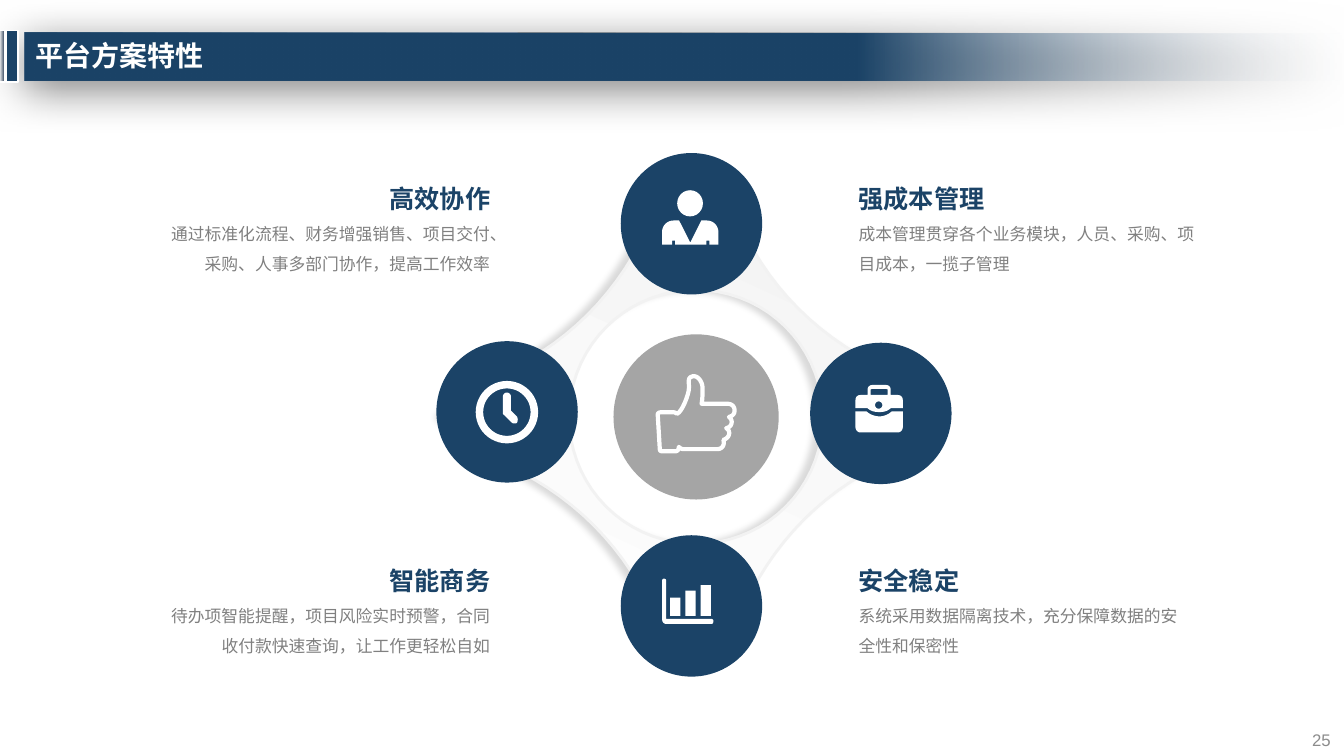
import math
import pptx
import pptx.util
import pptx.dml.color
import pptx.enum.shapes
import pptx.enum.text
import pptx.oxml.ns
from lxml import etree

Pt = pptx.util.Pt
SHAPE = pptx.enum.shapes.MSO_SHAPE
ALIGN = pptx.enum.text.PP_ALIGN
FONT = "Noto Sans CJK SC"
COLORS = {"navy": "1B4367", "white": "FFFFFF", "grey": "A5A5A5", "pale": "F2F2F2",
          "ice": "F6F8FC", "slate": "44546A", "body": "808080", "number": "8C8C8C", "black": "000000"}

PERSON = [(0, 17.3), (0, 8.6), (0, 3.6, 3.6, 0, 8.6, 0), (12.2, 0), (20.2, 15.8), (28.1, 0),
          (31.7, 0), (36.7, 0, 40.3, 3.6, 40.3, 8.6), (40.3, 17.3), (33.8, 17.3), (33.8, 14.4),
          (31.7, 14.4), (31.7, 17.3), (9.4, 17.3), (9.4, 14.4), (7.2, 14.4), (7.2, 17.3)]
CLOCK_HAND = [(0, 2.9), (0, 1.4, 1.4, 0, 2.9, 0), (4.3, 0, 5.8, 1.4, 5.8, 2.9), (5.8, 13),
              (10.1, 17.3), (10.8, 18.7, 10.8, 20.2, 10.1, 21.6), (9.4, 22.3, 7.2, 22.3, 6.5, 21.6),
              (0.7, 15.8), (0, 15.8, 0, 15, 0, 13.7)]
AXES = [(0, 1.4), (0, 0.7, 0.7, 0, 1.4, 0), (2.2, 0, 2.9, 0.7, 2.9, 1.4), (2.9, 28.8),
        (35.3, 28.8), (36, 28.8, 36.7, 29.5, 36.7, 30.2), (36.7, 31.7, 36, 32.4, 35.3, 32.4),
        (2.9, 32.4), (1.4, 32.4, 0, 31, 0, 28.8)]
CASE_BOTTOM = [(0, 0), (7.9, 0), (10.1, 2.2, 13.7, 3.6, 17.3, 3.6), (20.2, 3.6, 23.8, 2.2, 25.9, 0),
               (33.8, 0), (33.8, 11.5), (33.8, 13, 32.4, 15.1, 30.2, 15.1), (3.6, 15.1),
               (1.4, 15.1, 0, 13, 0, 11.5)]
CASE_TOP = [(30.2, 7.2), (25.2, 7.2), (25.2, 3.6), (25.2, 1.4, 23.8, 0, 21.6, 0), (12.2, 0),
            (10.1, 0, 8.6, 1.4, 8.6, 3.6), (8.6, 7.2), (3.6, 7.2), (1.4, 7.2, 0, 8.6, 0, 10.8),
            (0, 16.6), (8.6, 16.6), (10.8, 18.7, 13.7, 19.4, 17.3, 19.4),
            (20.2, 19.4, 23, 18.7, 25.2, 16.6), (33.8, 16.6), (33.8, 10.8),
            (33.8, 8.6, 32.4, 7.2, 30.2, 7.2)]
CASE_HANDLE = [(10.8, 7.2), (10.8, 3.6), (10.8, 2.9, 11.5, 2.9, 12.2, 2.9), (21.6, 2.9),
               (22.3, 2.9, 23, 2.9, 23, 3.6), (23, 7.2)]
THUMB = [(5, 27.2), (11.5, 27.2), (13, 27.2, 14, 27.6, 14.9, 28.4), (18.5, 27, 23.4, 14.4, 23.4, 10),
         (23.4, 8.6), (23.4, 5.5, 22.7, 3.5, 24.5, 2.2), (29, -0.5, 32.9, 5, 33.1, 9.4),
         (33.2, 15, 33, 18.5, 32.4, 21.2), (51, 21.2), (54.5, 21.2, 56, 23.7, 56, 25.9),
         (56, 28.5, 54.5, 30, 52, 30.6), (55.5, 33, 54, 38.2, 50, 38.6),
         (53.5, 40.5, 52.8, 45.5, 48, 47), (49.2, 50.5, 47, 53.6, 43.9, 53.6), (19.4, 53.6),
         (18, 53.6, 17, 52.8, 16.2, 52), (16, 55, 14.5, 55.2, 13, 55.2), (5, 55.2),
         (3.5, 55.2, 2.6, 55, 2.6, 53.6), (1.1, 29), (1.1, 27.8, 2, 27.2, 5, 27.2)]
ARM = [(0, -179.6), (24.1, -155.2), (27.7, -146.5), (37.8, -121.3, 52.9, -97.6, 73.1, -77.4),
       (93.2, -57.2, 117.7, -41.4, 142.9, -31.3), (151.6, -28.4)]


def rgb(name):
    return pptx.dml.color.RGBColor.from_string(COLORS[name])


def style(sp, fill=None, line=None, width=1):
    sp.shadow.inherit = False
    if fill:
        sp.fill.solid()
        sp.fill.fore_color.rgb = rgb(fill)
    else:
        sp.fill.background()
    if line:
        sp.line.color.rgb = rgb(line)
        sp.line.width = Pt(width)
    else:
        sp.line.fill.background()
    return sp


def shade(sp, stops, angle):
    sp.fill.gradient()
    sp.fill.gradient_angle = angle
    for stop, (position, color) in zip(sp.fill.gradient_stops, stops):
        stop.position = position
        stop.color.rgb = rgb(color)


def add_xml(parent, tag, **attrs):
    return etree.SubElement(parent, pptx.oxml.ns.qn(tag), attrs)


def cast_shadow(sp, alpha, blur, dist, angle):
    effects = sp._element.spPr.find(pptx.oxml.ns.qn("a:effectLst"))
    shadow = add_xml(effects, "a:outerShdw", blurRad=str(Pt(blur)), dist=str(Pt(dist)),
                     dir=str(angle * 60000), algn="ctr", rotWithShape="0")
    color = add_xml(shadow, "a:srgbClr", val=COLORS["black"])
    add_xml(color, "a:alpha", val=str(alpha * 1000))


def preset(s, kind, x, y, w, h, fill, line=None):
    return style(s.shapes.add_shape(kind, Pt(x), Pt(y), Pt(w), Pt(h)), fill, line)


def flatten(contour, steps=8):
    points = []
    for seg in contour:
        if len(seg) == 2:
            points.append(seg)
            continue
        curve = [points[-1], seg[:2], seg[2:4], seg[4:]]
        for i in range(1, steps + 1):
            t = i / steps
            weights = [(1 - t) ** 3, 3 * t * (1 - t) ** 2, 3 * t * t * (1 - t), t ** 3]
            points.append(tuple(sum(k * p[axis] for k, p in zip(weights, curve)) for axis in (0, 1)))
    return [(x * 100, y * 100) for x, y in points]


def circle(cx, cy, r, steps=72):
    angles = [2 * math.pi * i / steps for i in range(steps)]
    return [(cx + r * math.cos(a), cy + r * math.sin(a)) for a in angles]


def outline(s, x, y, contours, fill="white", line=None, width=1):
    first, *rest = [flatten(c) for c in contours]
    fb = s.shapes.build_freeform(*first[0], scale=Pt(0.01))
    fb.add_line_segments(first[1:], close=True)
    for points in rest:
        fb.move_to(*points[0])
        fb.add_line_segments(points[1:], close=True)
    return style(fb.convert_to_shape(Pt(x), Pt(y)), fill, line, width)


def format_text(p, size, color, bold=False, align=ALIGN.LEFT, spacing=None, font=FONT):
    p.alignment = align
    p.line_spacing = spacing
    for r in p.runs:
        r.font.size = Pt(size)
        r.font.bold = bold
        r.font.color.rgb = rgb(color)
        r.font.name = font
        add_xml(r._r.get_or_add_rPr(), "a:ea", typeface=font)


def header(s, x, y, w, h, title):
    band = outline(s, x + 17.3, y + 1.4, [[(0, 0), (w, 0.7), (w, h - 2.6), (0, h - 2.6)]], "navy")
    shade(band, [(0, "ice"), (0.37, "navy")], 180)
    add_xml(band._element.xpath(".//a:gs/a:srgbClr")[0], "a:alpha", val="0")
    cast_shadow(band, 50, 31, 6, 97)
    preset(s, SHAPE.RECTANGLE, x + 4.3, y, 8.6, h, "navy", "white")
    edge = preset(s, SHAPE.RECTANGLE, x - 0.7, y, 4.3, h, "slate", "white")
    shade(edge, [(0.12, "pale"), (0.87, "slate")], 0)
    sp = s.shapes.title
    sp._element.getparent().append(sp._element)
    sp.left, sp.top, sp.width, sp.height = Pt(x + 18), Pt(y + 2.4), Pt(878), Pt(33)
    tf = sp.text_frame
    tf.text = title
    tf.auto_size = pptx.enum.text.MSO_AUTO_SIZE.NONE
    tf.vertical_anchor = pptx.enum.text.MSO_ANCHOR.MIDDLE
    format_text(tf.paragraphs[0], 20, "white", True, spacing=0.9)


def person(s, x, y):
    preset(s, SHAPE.OVAL, x + 40.3, y + 26.6, 18.4, 18.7, "white")
    outline(s, x + 29.5, y + 48.2, [PERSON])


def clock(s, x, y):
    preset(s, SHAPE.DONUT, x + 28.1, y + 28.4, 44.6, 44.6, "white").adjustments[0] = 0.12
    outline(s, x + 47.5, y + 36.7, [CLOCK_HAND])


def bars(s, x, y):
    for i, height in enumerate((13, 18, 22)):
        preset(s, SHAPE.RECTANGLE, x + 35.3 + 10.9 * i, y + 57.6 - height, 7.3, height, "white")
    outline(s, x + 29.5, y + 31, [AXES])


def briefcase(s, x, y):
    outline(s, x + 32.4, y + 49, [CASE_BOTTOM])
    outline(s, x + 32.4, y + 30.2, [CASE_TOP, CASE_HANDLE, circle(16.6, 14.4, 2.6)])


def wheel(s, cx, cy):
    contour, arm = [], ARM
    for _ in range(4):
        contour += arm
        arm = [tuple(v for i in range(0, len(seg), 2) for v in (-seg[i + 1], seg[i])) for seg in arm]
    ring = outline(s, cx, cy, [contour, circle(0, 0, 90.7)], "pale", "pale", 2)
    shade(ring, [(0, "white"), (1, "pale")], 65)
    cast_shadow(ring, 15, 5, 6, 180)
    d = 101
    for dx, dy, icon in ((-135, -3.6, clock), (132, -2.5, briefcase),
                         (-3.3, -138, person), (-3.3, 135, bars)):
        x, y = cx + dx - d / 2, cy + dy - d / 2
        preset(s, SHAPE.OVAL, x, y, d, d, "navy")
        icon(s, x, y)
    preset(s, SHAPE.OVAL, cx - 59, cy - 59, 118, 118, "grey")
    outline(s, cx - 28.5, cy - 30.6, [THUMB], None, "white", 3)


def feature(s, x, y, w, h, heading, detail, align):
    tf = s.shapes.add_textbox(Pt(x), Pt(y), Pt(w), Pt(h)).text_frame
    tf.word_wrap = True
    tf.text = heading
    format_text(tf.paragraphs[0], 18, "navy", True, align, 1.5)
    p = tf.add_paragraph()
    p.text = detail
    format_text(p, 12, "body", False, align, 1.5)


def page_number(s, x, y, w, h, number):
    tf = s.shapes.add_textbox(Pt(x), Pt(y), Pt(w), Pt(h)).text_frame
    tf.word_wrap = True
    tf.margin_left = tf.margin_right = Pt(9.4)
    tf.margin_top = tf.margin_bottom = Pt(5)
    tf.vertical_anchor = pptx.enum.text.MSO_ANCHOR.MIDDLE
    tf.text = number
    format_text(tf.paragraphs[0], 12, "number", align=ALIGN.RIGHT, font="Arial")


def main():
    prs = pptx.Presentation()
    prs.slide_width, prs.slide_height = Pt(960), Pt(540)
    s = prs.slides.add_slide(prs.slide_layouts[5])
    header(s, 0, 22, 944, 36.6, "平台方案特性")
    wheel(s, 497.2, 297.8)
    upper, lower = 116.6, 389.5
    for x, y, w, align, heading, detail in (
            (606.2, upper, 258, ALIGN.LEFT, "强成本管理", "成本管理贯穿各个业务模块，人员、采购、项目成本，一揽子管理"),
            (107.3, upper, 250, ALIGN.RIGHT, "高效协作", "通过标准化流程、财务增强销售、项目交付、采购、人事多部门协作，提高工作效率"),
            (606.2, lower, 246, ALIGN.LEFT, "安全稳定", "系统采用数据隔离技术，充分保障数据的安全性和保密性"),
            (107.3, lower, 250, ALIGN.RIGHT, "智能商务", "待办项智能提醒，项目风险实时预警，合同收付款快速查询，让工作更轻松自如")):
        feature(s, x, y, w, 83.5, heading, detail, align)
    page_number(s, 911, 516, 49, 24.5, "25")
    prs.save("out.pptx")


if __name__ == "__main__":
    main()
